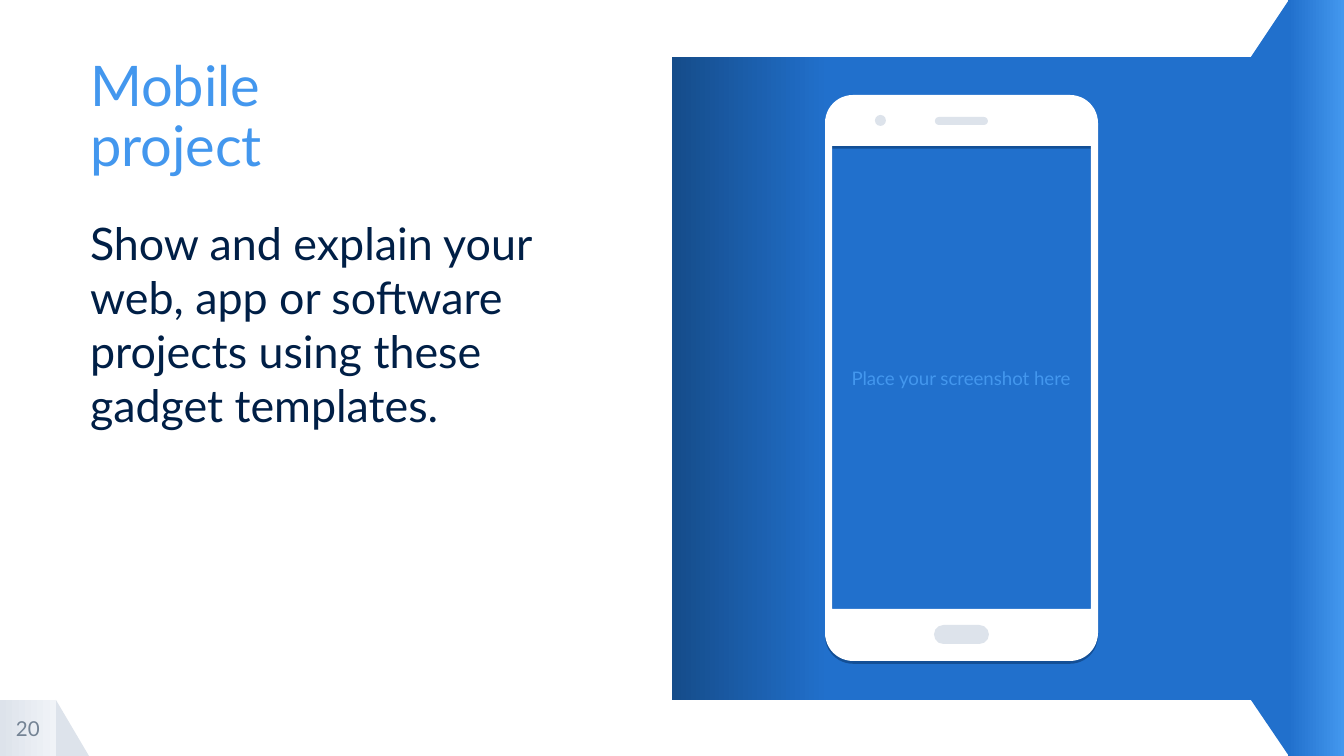
import math
from typing import NamedTuple

import lxml.etree
import pptx
import pptx.dml.color
import pptx.enum.shapes
import pptx.enum.text
import pptx.oxml.ns
import pptx.util

RGB = pptx.dml.color.RGBColor
SHAPE = pptx.enum.shapes.MSO_SHAPE
ALIGN = pptx.enum.text.PP_ALIGN
ANCHOR = pptx.enum.text.MSO_ANCHOR

EMU_PER_PX = 914400 / 134.4
FONT = "Lato"

WHITE = RGB(0xFF, 0xFF, 0xFF)
NAVY = RGB(0x00, 0x1F, 0x46)
DARK_BLUE = RGB(0x15, 0x4C, 0x8A)
BLUE = RGB(0x21, 0x70, 0xCC)
LIGHT_BLUE = RGB(0x43, 0x97, 0xEE)
GREY = RGB(0xDD, 0xE3, 0xEB)
PALE_GREY = RGB(0xF0, 0xF3, 0xF7)
SLATE = RGB(0x74, 0x83, 0x94)


class Box(NamedTuple):
    left: int
    top: int
    width: int
    height: int


class Gradient(NamedTuple):
    """Left-to-right blend that is complete at the position `end`."""
    start_color: RGB
    end_color: RGB
    end: float = 1.0


class Block(NamedTuple):
    kind: SHAPE
    box: Box
    fill: RGB | Gradient


class Label(NamedTuple):
    text: str
    box: Box
    size: int
    color: RGB
    align: ALIGN = ALIGN.LEFT
    anchor: ANCHOR = ANCHOR.TOP
    inset: int = 0
    line_spacing: float = 1.0
    space_before: int = 0


BACKDROP = [
    Block(SHAPE.RIGHT_TRIANGLE, Box(56, 700, 33, 56), GREY),
    Block(SHAPE.RECTANGLE, Box(0, 700, 56, 56), Gradient(GREY, PALE_GREY)),
    Block(SHAPE.RECTANGLE, Box(1288, 0, 56, 756), Gradient(BLUE, LIGHT_BLUE)),
    Block(SHAPE.RECTANGLE, Box(672, 57, 579, 643), Gradient(DARK_BLUE, BLUE, 0.27)),
]
FOLD = [(1289, 0), (1251, 57), (1251, 700), (1289, 756)]

PHONE = Box(825, 95, 273, 566)
PHONE_RADIUS = 28
SCREEN = Box(832, 146, 259, 463)
PHONE_DETAILS = [
    Block(SHAPE.ROUNDED_RECTANGLE, Box(934, 625, 55, 19), GREY),
    Block(SHAPE.OVAL, Box(875, 115, 11, 11), GREY),
    Block(SHAPE.ROUNDED_RECTANGLE, Box(935, 117, 53, 8), GREY),
]

LABELS = [
    Label("Mobile\vproject", Box(90, 58, 531, 136), 30, LIGHT_BLUE, line_spacing=0.9),
    Label("Show and explain your web, app or software projects using these gadget templates.",
          Box(90, 216, 531, 415), 24, NAVY, space_before=6),
    Label("Place your screenshot here", Box(832, 148, 258, 460), 10, LIGHT_BLUE,
          ALIGN.CENTER, ANCHOR.MIDDLE, inset=13),
    Label("20", Box(0, 700, 56, 56), 11, SLATE, ALIGN.CENTER, ANCHOR.MIDDLE),
]


def px(length: float) -> int:
    return round(length * EMU_PER_PX)


def paint(shape, fill: RGB | Gradient) -> None:
    shape.shadow.inherit = False
    shape.line.fill.background()
    if isinstance(fill, Gradient):
        shape.fill.gradient()
        shape.fill.gradient_angle = 0
        first, last = shape.fill.gradient_stops
        first.color.rgb, first.position = fill.start_color, 0
        last.color.rgb, last.position = fill.end_color, fill.end
    else:
        shape.fill.solid()
        shape.fill.fore_color.rgb = fill


def add_block(page, block: Block) -> None:
    shape = page.shapes.add_shape(block.kind, *map(px, block.box))
    if block.kind == SHAPE.ROUNDED_RECTANGLE:
        shape.adjustments[0] = 0.5
    paint(shape, block.fill)


def add_outline(page, contours: list[list[tuple[float, float]]], fill: RGB):
    """Draw one freeform; contours after the first are holes."""
    builder = None
    for contour in contours:
        first, *rest = [(px(x), px(y)) for x, y in contour]
        if builder is None:
            builder = page.shapes.build_freeform(*first)
        else:
            builder.move_to(*first)
        builder.add_line_segments(rest, close=True)
    shape = builder.convert_to_shape()
    paint(shape, fill)
    return shape


def rounded_contour(box: Box, radius: int, steps: int = 12) -> list[tuple[float, float]]:
    """Clockwise points, starting at the left end of the top left corner."""
    left, top = box.left + radius, box.top + radius
    right = box.left + box.width - radius
    bottom = box.top + box.height - radius
    centres = [(left, top), (right, top), (right, bottom), (left, bottom)]
    points = []
    for corner, (x, y) in enumerate(centres):
        for step in range(steps + 1):
            angle = math.pi + (corner + step / steps) * math.pi / 2
            points.append((x + radius * math.cos(angle), y + radius * math.sin(angle)))
    return points


def add_drop_shadow(shape, color: RGB, opacity: int, distance: float) -> None:
    """Cast a sharp shadow straight down."""
    qn = pptx.oxml.ns.qn
    effects = shape._element.spPr.find(qn("a:effectLst"))
    shadow = lxml.etree.SubElement(
        effects, qn("a:outerShdw"), blurRad="0", dist=str(pptx.util.Pt(distance)),
        dir="5400000", algn="bl", rotWithShape="0")
    tint = lxml.etree.SubElement(shadow, qn("a:srgbClr"), val=str(color))
    lxml.etree.SubElement(tint, qn("a:alpha"), val=str(opacity * 1000))


def add_phone(page) -> None:
    right, bottom = SCREEN.left + SCREEN.width, SCREEN.top + SCREEN.height
    screen_hole = [(SCREEN.left, SCREEN.top), (SCREEN.left, bottom),
                   (right, bottom), (right, SCREEN.top)]
    case = add_outline(page, [rounded_contour(PHONE, PHONE_RADIUS), screen_hole], WHITE)
    add_drop_shadow(case, NAVY, opacity=40, distance=1.5)
    for detail in PHONE_DETAILS:
        add_block(page, detail)


def add_label(page, label: Label) -> None:
    frame = page.shapes.add_textbox(*map(px, label.box)).text_frame
    frame.word_wrap = True
    frame.vertical_anchor = label.anchor
    frame.margin_left = frame.margin_right = px(label.inset)
    frame.margin_top = frame.margin_bottom = px(label.inset)
    para = frame.paragraphs[0]
    para.text = label.text
    para.alignment = label.align
    para.line_spacing = label.line_spacing
    para.space_before = pptx.util.Pt(label.space_before)
    para.font.name = FONT
    para.font.size = pptx.util.Pt(label.size)
    para.font.color.rgb = label.color


def main() -> None:
    deck = pptx.Presentation()
    deck.slide_width, deck.slide_height = px(1344), px(756)
    page = deck.slides.add_slide(deck.slide_layouts[6])
    for block in BACKDROP:
        add_block(page, block)
    add_outline(page, [FOLD], BLUE)
    add_phone(page)
    for label in LABELS:
        add_label(page, label)
    deck.save("out.pptx")


if __name__ == "__main__":
    main()
